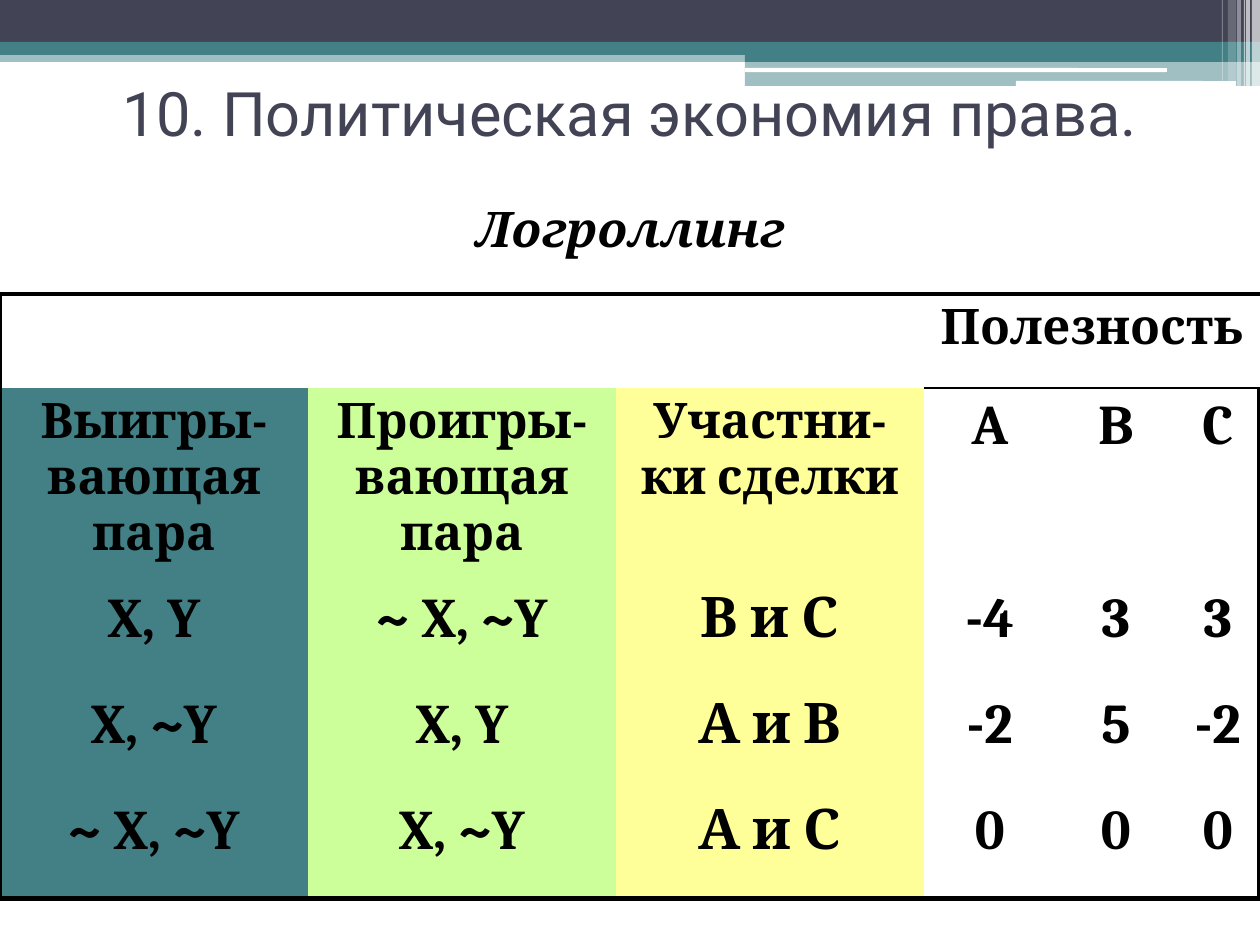
from lxml import etree
from pptx import Presentation
from pptx import util as u
from pptx.dml.color import RGBColor
from pptx.enum import shapes, text
from pptx.oxml.ns import qn

PX = 914400 // 126
TEAL, NAVY, WHITE, BLACK = "438086", "424456", "FFFFFF", "000000"
RECT = shapes.MSO_SHAPE.RECTANGLE
ROUND = shapes.MSO_SHAPE.ROUNDED_RECTANGLE

TITLE = "10. Политическая экономия права."
SUBTITLE = "Логроллинг"

# left, top, width, height, preset, colour, opacity in percent
BANNER = [
    (0, 50, 1260, 12, RECT, TEAL, 50),
    (0, 0, 1260, 43, RECT, NAVY, 100),
    (0, 42, 1260, 13, RECT, TEAL, 100),
    (745, 49, 515, 13, RECT, TEAL, 100),
    (745, 61, 515, 25, RECT, TEAL, 50),
    (745, 68, 422, 4, ROUND, WHITE, 100),
    (1016, 81, 220, 5, ROUND, WHITE, 100),
    (1252, 0, 8, 86, RECT, WHITE, 65),
    (1246, 0, 4, 86, RECT, WHITE, 65),
    (1244, 0, 1, 86, RECT, WHITE, 60),
    (1237, 0, 4, 86, RECT, WHITE, 40),
    (1228, 0, 8, 81, RECT, WHITE, 20),
    (1222, 0, 1, 81, RECT, WHITE, 30),
]

ROWS = [
    ["", "", "", "Полезность", "", ""],
    ["Выигры-вающая пара", "Проигры-вающая пара", "Участни-ки сделки", "A", "B", "C"],
    ["X, Y", "~ X, ~Y", "В и С", "-4", "3", "3"],
    ["X, ~Y", "X, Y", "А и В", "-2", "5", "-2"],
    ["~ X, ~Y", "X, ~Y", "А и С", "0", "0", "0"],
]
COLUMN_WIDTHS = [308, 308, 308, 132, 120, 84]
ROW_HEIGHTS = [94, 193, 106, 106, 106]
COLUMN_FILLS = [TEAL, "CCFF99", "FFFF99"]
UTILITY_COLUMN = len(COLUMN_FILLS)


def px(*lengths):
    return [length * PX for length in lengths]


def rgb(value):
    return RGBColor.from_string(value)


def write(frame, words, size, font, color, bold=False, italic=False):
    frame.text = words
    frame.word_wrap = True
    paragraph = frame.paragraphs[0]
    paragraph.alignment = text.PP_ALIGN.CENTER
    for run in paragraph.runs:
        run.font.size, run.font.name = u.Pt(size), font
        run.font.bold, run.font.italic = bold, italic
        run.font.color.rgb = rgb(color)
    return paragraph


def add_bar(slide, left, top, width, height, preset, color, opacity):
    bar = slide.shapes.add_shape(preset, *px(left, top, width, height))
    bar.shadow.inherit = False
    bar.line.fill.background()
    bar.fill.solid()
    bar.fill.fore_color.rgb = rgb(color)
    if opacity < 100:
        tint = bar.fill._xPr.find(qn("a:solidFill"))[0]
        etree.SubElement(tint, qn("a:alpha")).set("val", str(opacity * 1000))


def set_borders(cell, widths):
    """Draw black sides, widths in points ordered left, right, top, bottom; 0 hides one."""
    properties = cell._tc.get_or_add_tcPr()
    for place, (side, width) in enumerate(zip("LRTB", widths)):
        line = etree.Element(qn(f"a:ln{side}"), w=str(u.Pt(width)))
        if width:
            fill = etree.SubElement(line, qn("a:solidFill"))
            etree.SubElement(fill, qn("a:srgbClr"), val=BLACK)
        else:
            etree.SubElement(line, qn("a:noFill"))
        properties.insert(place, line)


def add_utility_table(slide):
    size = px(0, 294, sum(COLUMN_WIDTHS), sum(ROW_HEIGHTS))
    table = slide.shapes.add_table(len(ROWS), len(COLUMN_WIDTHS), *size).table
    table.first_row = table.horz_banding = False
    for column, width in zip(table.columns, COLUMN_WIDTHS):
        column.width = width * PX
    for row, height in zip(table.rows, ROW_HEIGHTS):
        row.height = height * PX
    last_row, last_column = len(ROWS) - 1, len(COLUMN_WIDTHS) - 1
    table.cell(0, UTILITY_COLUMN).merge(table.cell(0, last_column))

    for r, words in enumerate(ROWS):
        for c, word in enumerate(words):
            cell = table.cell(r, c)
            is_utility = c >= UTILITY_COLUMN
            if word:
                is_heading = r == 0 or (r == 1 and not is_utility)
                write(cell.text_frame, word, 28 if is_heading else 32,
                      "Cambria", BLACK, bold=True)
            if r > 0 and not is_utility:
                cell.fill.solid()
                cell.fill.fore_color.rgb = rgb(COLUMN_FILLS[c])
            else:
                cell.fill.background()
            top = 3 if r == 0 else int(r == 1 and is_utility)
            bottom = 3 if r == last_row else int(r == 0 and is_utility)
            set_borders(cell, (3 * (c == 0), 3 * (c == last_column), top, bottom))


def main():
    deck = Presentation()
    deck.slide_width, deck.slide_height = px(1260, 945)
    slide = deck.slides.add_slide(deck.slide_layouts[6])
    for bar in BANNER:
        add_bar(slide, *bar)

    subtitle = slide.shapes.add_textbox(*px(32, 204, 1197, 741))
    subtitle.fill.solid()
    subtitle.fill.fore_color.rgb = rgb(WHITE)
    paragraph = write(subtitle.text_frame, SUBTITLE, 28, "Cambria", BLACK, True, True)
    paragraph.line_spacing = 0.8
    paragraph.space_before = u.Pt(3)

    add_utility_table(slide)

    title = slide.shapes.add_textbox(*px(0, 59, 1260, 106))
    write(title.text_frame, TITLE, 35, "Roboto", NAVY)
    title.text_frame.vertical_anchor = text.MSO_ANCHOR.MIDDLE
    deck.save("out.pptx")


if __name__ == "__main__":
    main()
